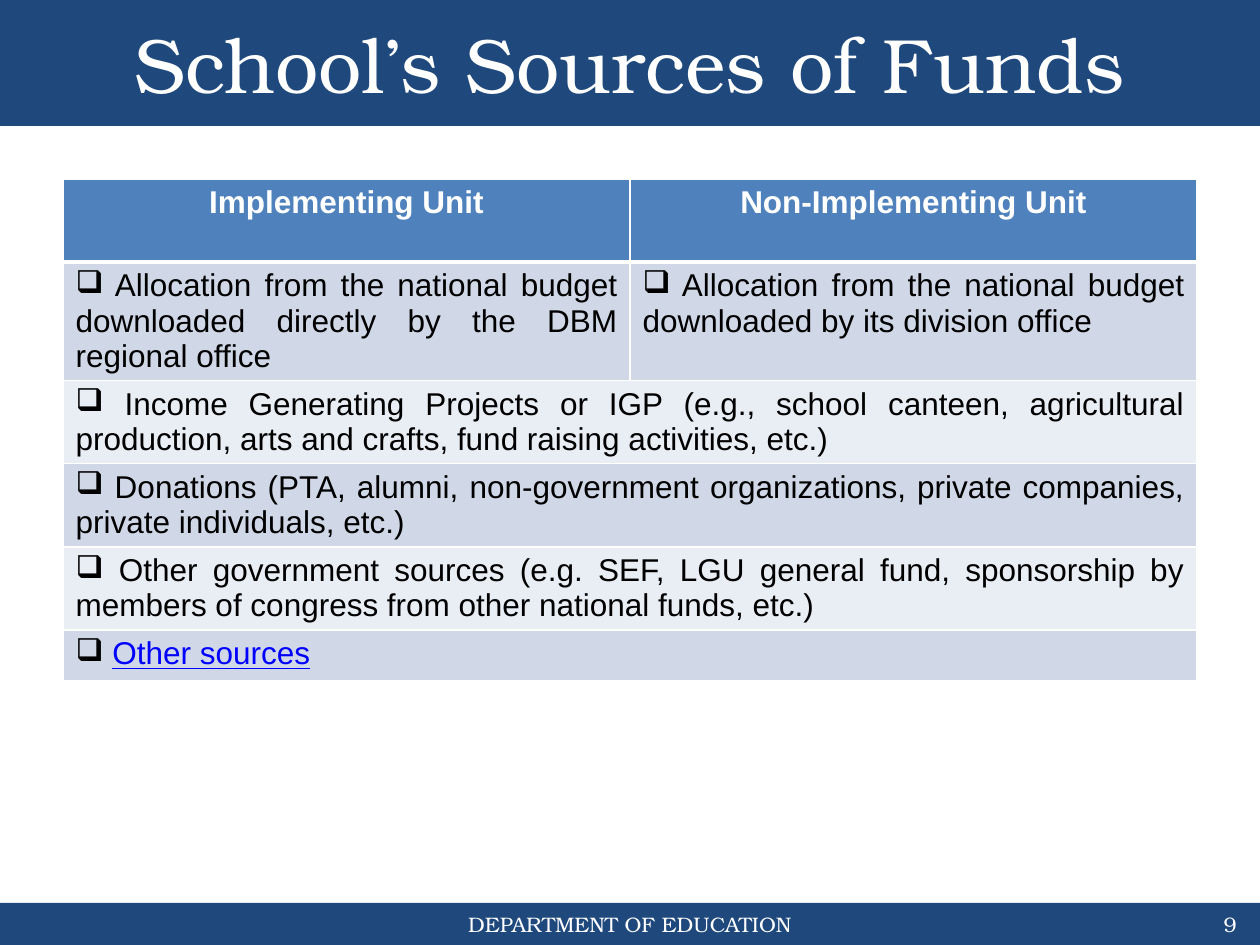
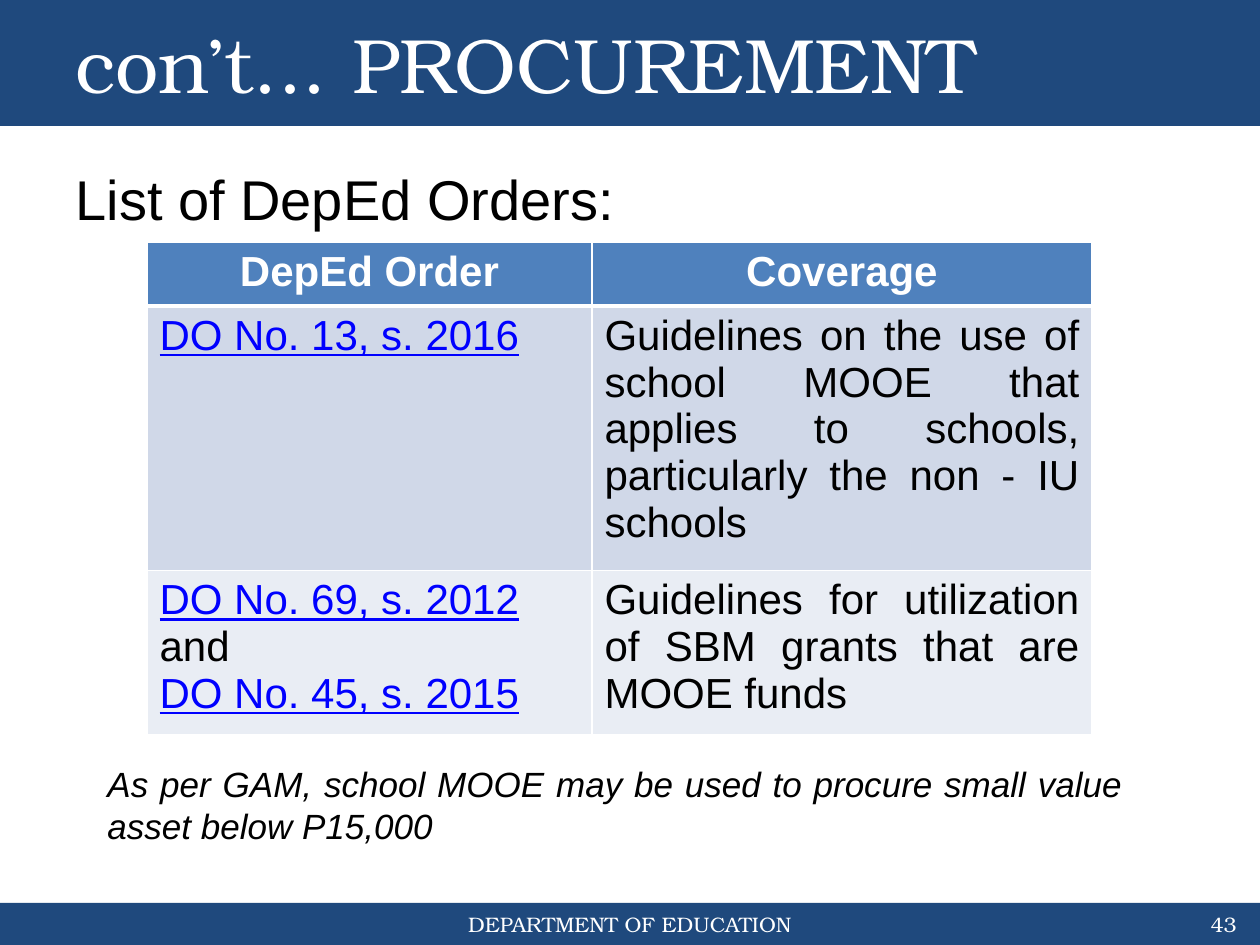
from lxml.etree import SubElement
from pptx import Presentation
from pptx.dml.color import RGBColor
from pptx.enum.shapes import MSO_SHAPE
from pptx.enum.text import MSO_ANCHOR, MSO_AUTO_SIZE, PP_ALIGN
from pptx.oxml import parse_xml
from pptx.oxml.ns import nsdecls, qn
from pptx.util import Emu, Pt

SCALE = 914400 / 126
COLORS = {
    "navy": "1F497D",
    "header": "4F81BD",
    "dark_row": "D0D8E8",
    "light_row": "E9EDF4",
    "white": "FFFFFF",
    "black": "000000",
    "link": "0000FF",
}
SERIF, SANS = "TeX Gyre Bonum", "Arial"
LINKS = {"Other sources", "DO No. 13, s. 2016", "DO No. 69, s. 2012 ", "DO No. 45, s. 2015"}
TITLE_BAND = (0, 0, 1260, 126)
FOOTER_BAND = (0, 903, 1260, 42)
TITLE_ONLY, TITLE_AND_BODY = 5, 1


def px(value):
    return Emu(round(value * SCALE))


def color(name):
    return RGBColor.from_string(COLORS[name])


def place(shape, box):
    shape.left, shape.top, shape.width, shape.height = map(px, box)


def style_run(run, size, font, color_name, bold=False, italic=False):
    is_link = run.text in LINKS
    run.font.size = Pt(size)
    run.font.name = font
    run.font.bold = bold
    run.font.italic = italic
    run.font.underline = is_link
    run.font.color.rgb = color("link" if is_link else color_name)


def write(text_frame, paragraphs, align, **style):
    text_frame.word_wrap = True
    for index, pieces in enumerate(paragraphs):
        paragraph = text_frame.add_paragraph() if index else text_frame.paragraphs[0]
        paragraph.alignment = align
        for piece in pieces:
            run = paragraph.add_run()
            run.text = piece
            style_run(run, **style)


def add_text(slide, box, text, align, anchor=MSO_ANCHOR.TOP, **style):
    shape = slide.shapes.add_textbox(*map(px, box))
    shape.text_frame.vertical_anchor = anchor
    write(shape.text_frame, [[text]], align, **style)
    return shape


def add_band(slide, box):
    band = slide.shapes.add_shape(MSO_SHAPE.RECTANGLE, *map(px, box))
    band.shadow.inherit = False
    band.fill.solid()
    band.fill.fore_color.rgb = color("navy")
    band.line.fill.background()
    return band


def move_frame_to_master(presentation, slide):
    left, top, width, height = FOOTER_BAND
    label_width = 400
    label_box = (left + (width - label_width) // 2, top, label_width, height)
    parts = [
        add_band(slide, FOOTER_BAND),
        add_band(slide, TITLE_BAND),
        add_text(slide, label_box, "DEPARTMENT OF EDUCATION", PP_ALIGN.CENTER,
                 MSO_ANCHOR.MIDDLE, size=12, font=SERIF, color_name="white"),
    ]
    tree = presentation.slide_master.shapes._spTree
    for index, part in enumerate(parts):
        part._element.nvSpPr.cNvPr.set("id", str(100 + index))
        tree.insert(2 + index, part._element)


def add_title(slide, text, align):
    title = slide.shapes.title
    left, top, width, height = TITLE_BAND
    place(title, (left + 63, top, width - 126, height))
    title.text_frame.auto_size = MSO_AUTO_SIZE.NONE
    title.text_frame.vertical_anchor = MSO_ANCHOR.MIDDLE
    write(title.text_frame, [[text]], align, size=44, font=SERIF, color_name="white")


def add_page_number(slide, number):
    left, top, width, height = FOOTER_BAND
    add_text(slide, (left + width - 305, top, 294, height), number, PP_ALIGN.RIGHT,
             MSO_ANCHOR.MIDDLE, size=12, font=SERIF, color_name="white")


def set_bullet(paragraph, character=None):
    properties = paragraph._p.get_or_add_pPr()
    if character:
        properties.set("marL", "0")
        properties.set("indent", "0")
        SubElement(properties, qn("a:buChar")).set("char", character)
    else:
        properties.set("marL", str(px(48)))
        properties.set("indent", str(px(-48)))
        SubElement(properties, qn("a:buNone"))


def set_borders(cell, top, bottom):
    properties = cell._tc.get_or_add_tcPr()
    widths = {"lnL": 1, "lnR": 1, "lnT": top, "lnB": bottom}
    for index, (side, width) in enumerate(widths.items()):
        properties.insert(index, parse_xml(
            f'<a:{side} {nsdecls("a")} w="{Pt(width)}"><a:solidFill>'
            f'<a:srgbClr val="{COLORS["white"]}"/></a:solidFill></a:{side}>'))


def fill_cell(cell, row_index, paragraphs, align, size):
    is_header = row_index == 0
    fill_name = "header" if is_header else ("light_row", "dark_row")[row_index % 2]
    cell.fill.solid()
    cell.fill.fore_color.rgb = color(fill_name)
    set_borders(cell, top=3 if row_index == 1 else 1, bottom=3 if is_header else 1)
    write(cell.text_frame, paragraphs, PP_ALIGN.CENTER if is_header else align,
          size=size, font=SANS, color_name="white" if is_header else "black",
          bold=is_header)


def add_grid(slide, origin, column_widths, row_heights, rows, aligns, size, bullet=None):
    box = (*origin, sum(column_widths), sum(row_heights))
    table = slide.shapes.add_table(len(rows), len(column_widths), *map(px, box)).table
    for column, width in zip(table.columns, column_widths):
        column.width = px(width)
    for row_index, (height, row) in enumerate(zip(row_heights, rows)):
        table.rows[row_index].height = px(height)
        if len(row) < len(column_widths):
            table.cell(row_index, 0).merge(table.cell(row_index, len(column_widths) - 1))
        for column_index, align in enumerate(aligns):
            cell = table.cell(row_index, column_index)
            paragraphs = row[column_index] if column_index < len(row) else []
            fill_cell(cell, row_index, paragraphs, align, size)
            if bullet and row_index and paragraphs:
                set_bullet(cell.text_frame.paragraphs[0], bullet)


def build_funds_slide(slide):
    add_title(slide, "School’s Sources of Funds", PP_ALIGN.CENTER)
    rows = [
        [[["Implementing Unit"]], [["Non-Implementing Unit"]]],
        [[[" Allocation from the national budget downloaded directly by the DBM regional office"]],
         [[" Allocation from the national budget downloaded by its division office"]]],
        [[[" Income Generating Projects or IGP (e.g., school canteen, agricultural production, "
           "arts and crafts, fund raising activities, etc.)"]]],
        [[[" Donations (PTA, alumni, non-government organizations, private companies, "
           "private individuals, etc.)"]]],
        [[[" Other government sources (e.g. SEF, LGU general fund, sponsorship by members "
           "of congress from other national funds, etc.)"]]],
        [[[" ", "Other sources"]]],
    ]
    add_grid(slide, (63, 179), [567, 567], [83, 118, 83, 83, 83, 51], rows,
             [PP_ALIGN.JUSTIFY] * 2, size=18, bullet="❑")
    add_page_number(slide, "9")


def build_procurement_slide(slide):
    add_title(slide, "con’t... PROCUREMENT", PP_ALIGN.LEFT)
    body = slide.placeholders[1]
    place(body, (63, 158, 1134, 687))
    body.text_frame.auto_size = MSO_AUTO_SIZE.NONE
    write(body.text_frame, [["List of DepEd Orders:"]], PP_ALIGN.LEFT,
          size=32, font=SANS, color_name="black")
    set_bullet(body.text_frame.paragraphs[0])
    add_page_number(slide, "43")
    rows = [
        [[["DepEd Order"]], [["Coverage"]]],
        [[["DO No. 13, s. 2016"]],
         [["Guidelines on the use of school MOOE that applies to schools, "
           "particularly the non - IU schools"]]],
        [[["DO No. 69, s. 2012 ", "and"], ["DO No. 45, s. 2015"]],
         [["Guidelines for utilization of SBM grants that are MOOE funds"]]],
    ]
    add_grid(slide, (147, 242), [445, 500], [64, 247, 158], rows,
             [PP_ALIGN.LEFT, PP_ALIGN.JUSTIFY], size=24)
    add_text(slide, (95, 756, 1040, 97),
             "As per GAM, school MOOE may be used to procure small value asset below P15,000",
             PP_ALIGN.JUSTIFY, size=20, font=SANS, color_name="black", italic=True)


def main():
    presentation = Presentation()
    presentation.slide_width, presentation.slide_height = px(1260), px(945)
    layouts = presentation.slide_layouts
    funds_slide = presentation.slides.add_slide(layouts[TITLE_ONLY])
    move_frame_to_master(presentation, funds_slide)
    build_funds_slide(funds_slide)
    build_procurement_slide(presentation.slides.add_slide(layouts[TITLE_AND_BODY]))
    presentation.save("out.pptx")


if __name__ == "__main__":
    main()
